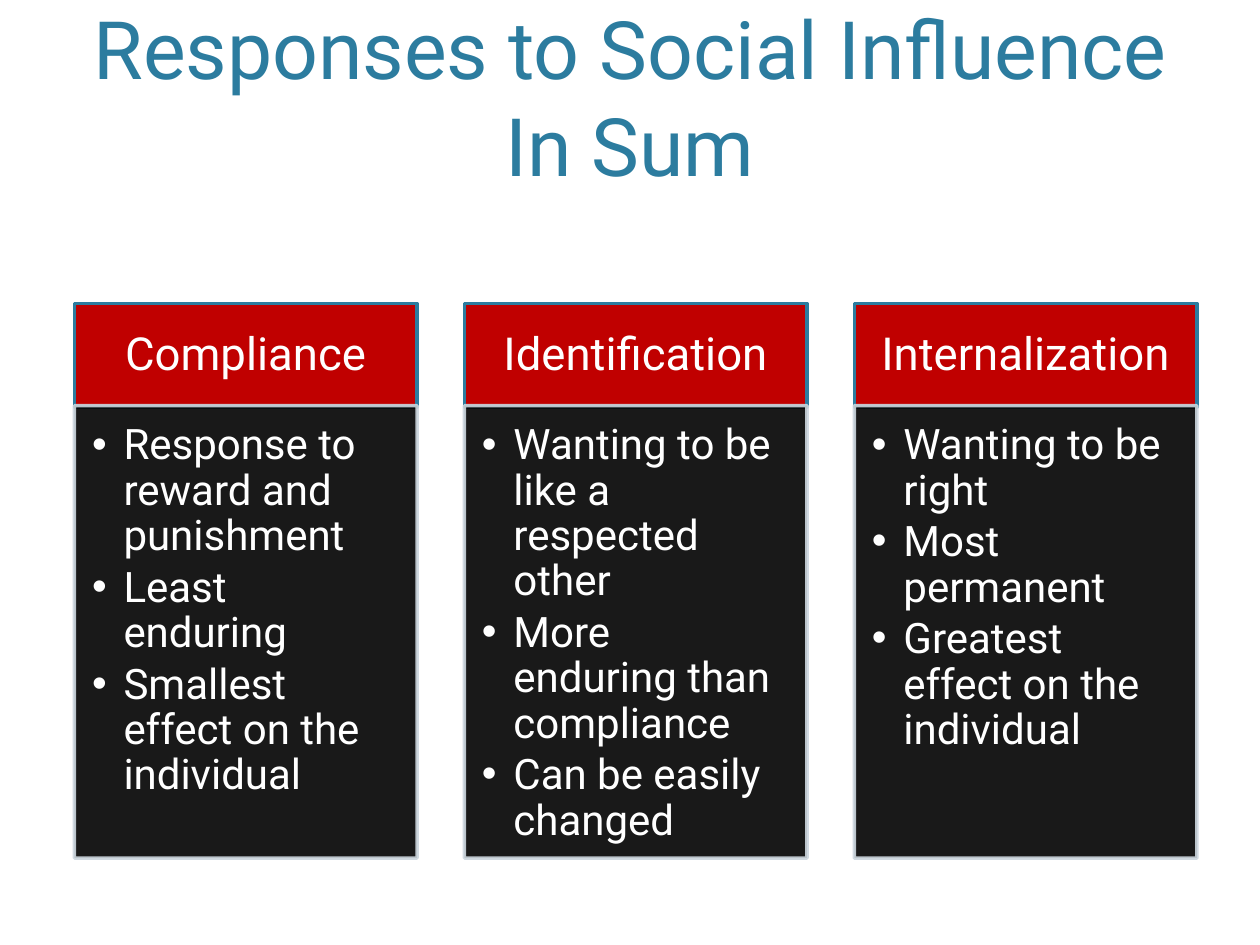
from lxml import etree
from pptx import Presentation
from pptx.dml.color import RGBColor
from pptx.enum import shapes, text
from pptx.oxml import ns
from pptx.util import Inches, Pt

# Content
TITLE = "Responses to Social Influence In Sum"
RESPONSES = [
    ("Compliance", ["Response to reward and punishment", "Least enduring",
                    "Smallest effect on the individual"]),
    ("Identification", ["Wanting to be like a respected other",
                        "More enduring than compliance",
                        "Can be easily changed"]),
    ("Internalization", ["Wanting to be right", "Most permanent",
                         "Greatest effect on the individual"]),
]

THEME = {
    "font": "Roboto", "title_size": 46, "head_size": 26, "body_size": 24,
    "title": "2C7C9F", "head": "C00000", "head_line": "2C7C9F",
    "body": "000000", "body_line": "CDD7DF", "text": "FFFFFF",
}

# Column grid, in inches
LEFT, PITCH, WIDTH = 0.59, 3.095, 2.72
HEAD_TOP, HEAD_HEIGHT = 2.41, 0.82
BODY_TOP, BODY_HEIGHT = 3.22, 3.59
BULLET_INDENT = 0.25


def add_span(para, words, size, color):
    span = para.add_run()
    span.text = words
    span.font.name = THEME["font"]
    span.font.size = Pt(size)
    span.font.color.rgb = RGBColor.from_string(color)


def set_opacity(fill_element, percent):
    color = fill_element.find(ns.qn("a:srgbClr"))
    etree.SubElement(color, ns.qn("a:alpha"), val=str(percent * 1000))


def add_panel(page, left, top, height, fill, line, insets, anchor):
    box = page.shapes.add_shape(
        shapes.MSO_SHAPE.RECTANGLE, Inches(left), Inches(top),
        Inches(WIDTH), Inches(height))
    box.shadow.inherit = False
    box.fill.solid()
    box.fill.fore_color.rgb = RGBColor.from_string(fill)
    box.line.color.rgb = RGBColor.from_string(line)
    box.line.width = Pt(2)
    frame = box.text_frame
    frame.word_wrap = True
    frame.vertical_anchor = anchor
    (frame.margin_left, frame.margin_top,
     frame.margin_right, frame.margin_bottom) = map(Inches, insets)
    return box


def add_bullet(para):
    props = para._p.get_or_add_pPr()
    props.set("marL", str(Inches(BULLET_INDENT)))
    props.set("indent", str(-Inches(BULLET_INDENT)))
    etree.SubElement(props, ns.qn("a:buFont"), typeface="Arial")
    etree.SubElement(props, ns.qn("a:buChar"), char="•")


def add_heading(page, left, heading):
    box = add_panel(page, left, HEAD_TOP, HEAD_HEIGHT, THEME["head"],
                    THEME["head_line"], (0.2, 0.12, 0.2, 0.12),
                    text.MSO_ANCHOR.MIDDLE)
    para = box.text_frame.paragraphs[0]
    para.alignment = text.PP_ALIGN.CENTER
    para.line_spacing = 0.9
    add_span(para, heading, THEME["head_size"], THEME["text"])


def add_points(page, left, points):
    box = add_panel(page, left, BODY_TOP, BODY_HEIGHT, THEME["body"],
                    THEME["body_line"], (0.14, 0.14, 0.19, 0.21),
                    text.MSO_ANCHOR.TOP)
    props = box._element.spPr
    set_opacity(props.find(ns.qn("a:solidFill")), 90)
    set_opacity(props.find(ns.qn("a:ln")).find(ns.qn("a:solidFill")), 90)
    frame = box.text_frame
    for index, point in enumerate(points):
        para = frame.add_paragraph() if index else frame.paragraphs[0]
        para.alignment = text.PP_ALIGN.LEFT
        para.line_spacing = 0.9
        para.space_after = Pt(0.15 * THEME["body_size"])
        add_bullet(para)
        add_span(para, point, THEME["body_size"], THEME["text"])


def main():
    deck = Presentation()
    deck.slide_width, deck.slide_height = Inches(10), Inches(7.5)
    page = deck.slides.add_slide(deck.slide_layouts.get_by_name("Title Only"))

    # Title
    title = page.shapes.title
    title.left, title.top = Inches(0.6), Inches(0.12)
    title.width, title.height = Inches(8.8), Inches(1.46)
    frame = title.text_frame
    frame.auto_size = text.MSO_AUTO_SIZE.NONE
    frame.word_wrap = True
    frame.vertical_anchor = text.MSO_ANCHOR.BOTTOM
    para = frame.paragraphs[0]
    para.alignment = text.PP_ALIGN.CENTER
    add_span(para, TITLE, THEME["title_size"], THEME["title"])

    # One column per response
    for column, (heading, points) in enumerate(RESPONSES):
        left = LEFT + column * PITCH
        add_heading(page, left, heading)
        add_points(page, left, points)

    deck.save("out.pptx")


if __name__ == "__main__":
    main()
